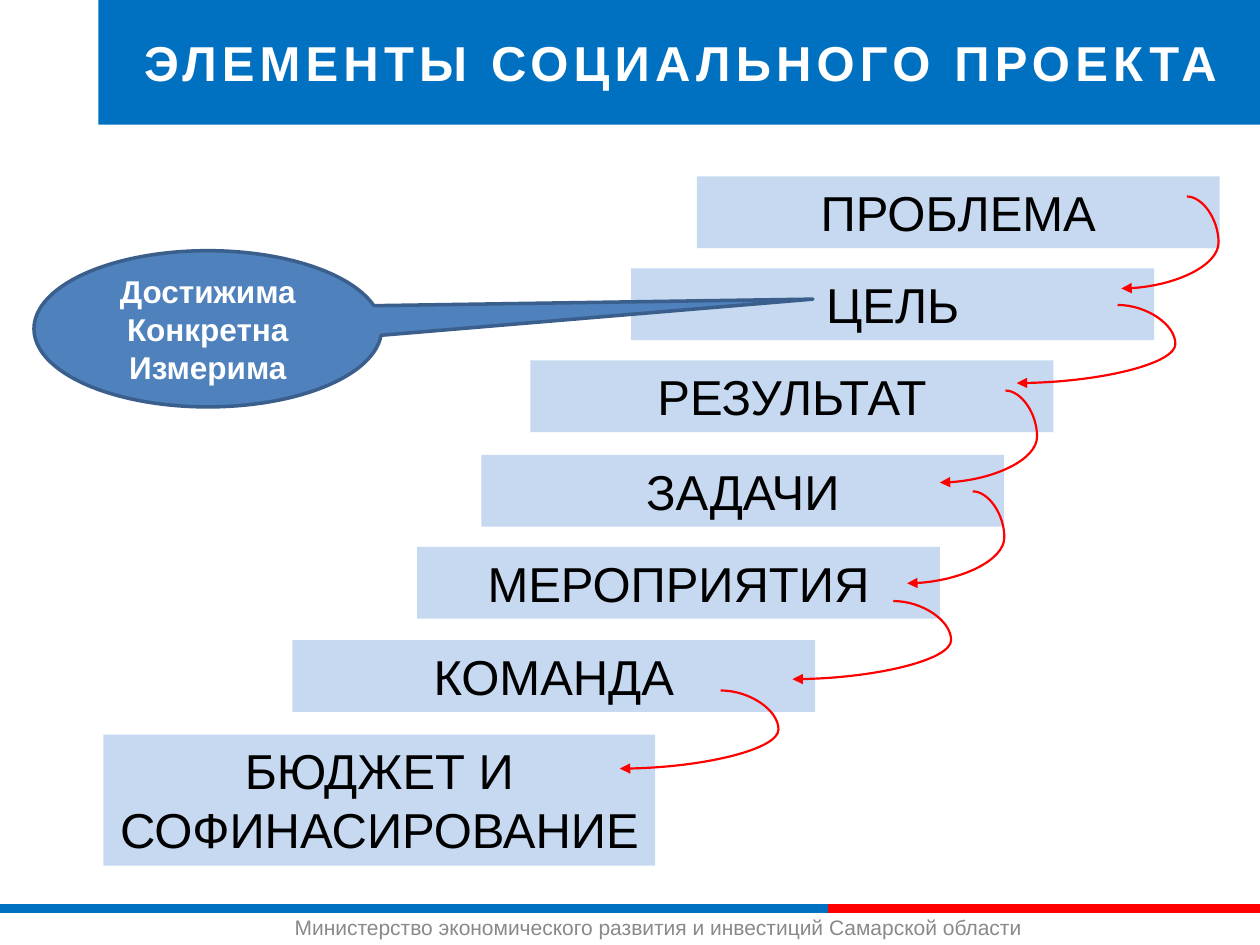
"""Build the slide showing the elements of a social project as a staircase."""
from lxml import etree
from pptx import Presentation
from pptx.dml.color import RGBColor
from pptx.enum.shapes import MSO_CONNECTOR, MSO_SHAPE
from pptx.enum.text import MSO_ANCHOR, MSO_AUTO_SIZE, PP_ALIGN
from pptx.oxml.ns import qn
from pptx.util import Inches, Pt


def write_text(shape, text, color, size, bold=False, align=PP_ALIGN.CENTER, anchor=MSO_ANCHOR.MIDDLE):
    frame = shape.text_frame
    frame.text = text
    frame_format = {"word_wrap": True, "auto_size": MSO_AUTO_SIZE.NONE, "vertical_anchor": anchor}
    font_format = {"name": "Arial", "size": Pt(size), "bold": bold}
    for name, value in frame_format.items():
        setattr(frame, name, value)
    for paragraph in frame.paragraphs:
        paragraph.alignment = align
        for run in paragraph.runs:
            for name, value in font_format.items():
                setattr(run.font, name, value)
            run.font.color.rgb = RGBColor.from_string(color)


def add_line(kind, start, end, color, width):
    connector = slide.shapes.add_connector(kind, *map(Inches, start + end))
    connector.line.color.rgb = RGBColor.from_string(color)
    connector.line.width = Pt(width)
    etree.SubElement(connector._element.spPr, qn("a:effectLst"))
    return connector


BLUE, RED, PALE_BLUE = "0070C1", "FF0000", "C6D9F1"

presentation = Presentation()
presentation.slide_width, presentation.slide_height = Inches(10), Inches(7.5)
slide = presentation.slides.add_slide(presentation.slide_layouts[5])

add_line(MSO_CONNECTOR.STRAIGHT, (0, 7.21), (6.57, 7.21), BLUE, 5)
add_line(MSO_CONNECTOR.STRAIGHT, (6.57, 7.21), (10, 7.21), RED, 5)
footer = slide.shapes.add_textbox(Inches(2.24), Inches(7.21), Inches(6.54), Inches(0.3))
write_text(footer, "Министерство экономического развития и инвестиций Самарской области",
           "898989", 12, align=PP_ALIGN.LEFT, anchor=MSO_ANCHOR.TOP)

title = slide.shapes.title
title_place = {"left": 0.78, "top": 0, "width": 9.25, "height": 0.99}
for name, value in title_place.items():
    setattr(title, name, Inches(value))
title.fill.solid()
title.fill.fore_color.rgb = RGBColor.from_string(BLUE)
write_text(title, "ЭЛЕМЕНТЫ СОЦИАЛЬНОГО ПРОЕКТА", "FFFFFF", 28, bold=True)
title.text_frame.paragraphs[0].runs[0]._r.get_or_add_rPr().set("spc", "300")

steps = [
    ("ПРОБЛЕМА", 5.53, 1.4, 4.15, 0.57),
    ("ЦЕЛЬ", 5.01, 2.13, 4.15, 0.57),
    ("РЕЗУЛЬТАТ", 4.21, 2.86, 4.15, 0.57),
    ("ЗАДАЧИ", 3.82, 3.61, 4.15, 0.57),
    ("МЕРОПРИЯТИЯ", 3.31, 4.34, 4.15, 0.57),
    ("КОМАНДА", 2.32, 5.08, 4.15, 0.57),
    ("БЮДЖЕТ И СОФИНАСИРОВАНИЕ", 0.82, 5.83, 4.38, 1.04),
]
for label, *place in steps:
    step = slide.shapes.add_shape(MSO_SHAPE.RECTANGLE, *map(Inches, place))
    step.shadow.inherit = False
    step.fill.solid()
    step.fill.fore_color.rgb = RGBColor.from_string(PALE_BLUE)
    step.line.fill.background()
    write_text(step, label, "000000", 28, anchor=MSO_ANCHOR.TOP)

tall, wide = (0.52, 0.73, -48300), (0.8, 0.62, -57400)
arrows = [
    (9.42, 1.56, tall),
    (8.87, 2.42, wide),
    (7.98, 3.1, tall),
    (7.72, 3.9, tall),
    (7.09, 4.77, wide),
    (5.72, 5.48, wide),
]
for left, top, (reach, drop, bulge) in arrows:
    arrow = add_line(MSO_CONNECTOR.CURVE, (left, top), (left - reach, top + drop), RED, 1.25)
    etree.SubElement(arrow.line._get_or_add_ln(), qn("a:tailEnd"), type="triangle")
    adjustments = arrow._element.spPr.find(qn("a:prstGeom")).get_or_add_avLst()
    etree.SubElement(adjustments, qn("a:gd"), name="adj1", fmla=f"val {bulge}")

callout = slide.shapes.add_shape(MSO_SHAPE.OVAL_CALLOUT, Inches(0.27), Inches(1.99), Inches(2.76), Inches(1.24))
callout.adjustments[0], callout.adjustments[1] = 1.74, -0.19
callout.shadow.inherit = False
callout.fill.solid()
callout.fill.fore_color.rgb = RGBColor.from_string("4F81BD")
callout.line.color.rgb = RGBColor.from_string("3A5F8C")
callout.line.width = Pt(2)
write_text(callout, "Достижима\nКонкретна\nИзмерима", "FFFFFF", 18, bold=True)

presentation.save("out.pptx")
